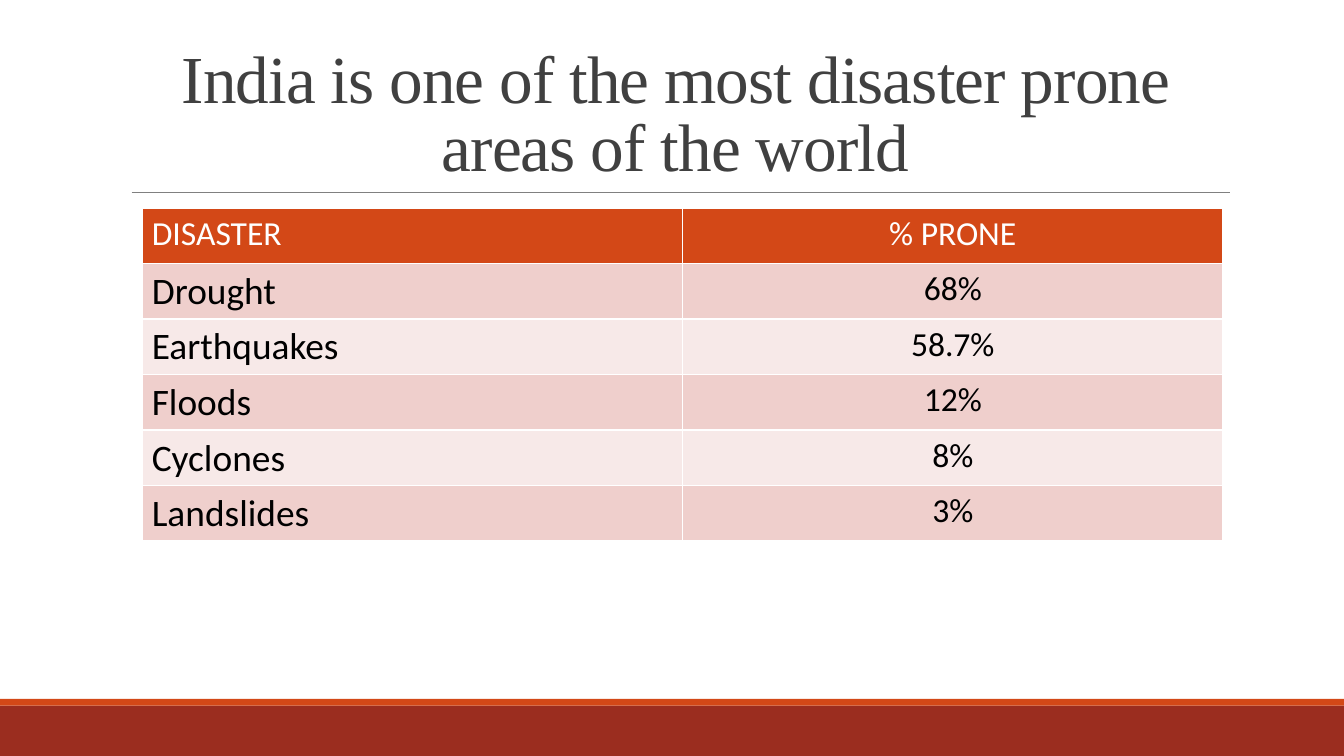
from lxml.etree import SubElement
from pptx import Presentation
from pptx.dml.color import RGBColor
from pptx.enum.shapes import MSO_CONNECTOR, MSO_SHAPE
from pptx.enum.text import MSO_ANCHOR, PP_ALIGN
from pptx.oxml.ns import qn
from pptx.util import Inches, Pt

TITLE = "India is one of the most disaster prone areas of the world"
ROWS = [
    ("DISASTER", "% PRONE"),
    ("Drought", "68%"),
    ("Earthquakes", "58.7%"),
    ("Floods", "12%"),
    ("Cyclones", "8%"),
    ("Landslides", "3%"),
]
THEME = {
    "title_font": "Times New Roman", "body_font": "Calibri",
    "title_size": 36, "name_size": 20, "value_size": 18,
    "title": "404040", "rule": "808080", "text": "000000", "white": "FFFFFF",
    "accent": "D34817", "footer": "9B2D1F", "bands": ("EFCFCC", "F7E9E8"),
}
FOOTER_BARS = [(5.25, 0.38, "footer"), (5.2, 0.05, "accent")]
COLUMN_WIDTH, ROW_HEIGHT = 4.02, 0.41


def style_text(para, font, size, color, align):
    para.alignment = align
    for span in para.runs:
        span.font.name = font
        span.font.size = Pt(size)
        span.font.color.rgb = RGBColor.from_string(color)


def set_margins(target):
    target.margin_left = target.margin_right = Inches(0.07)
    target.margin_top = target.margin_bottom = Inches(0.04)


def add_borders(cell):
    properties = cell._tc.get_or_add_tcPr()
    for position, side in enumerate("LRTB"):
        line = SubElement(properties, qn(f"a:ln{side}"), w=str(Pt(1)))
        fill = SubElement(line, qn("a:solidFill"))
        SubElement(fill, qn("a:srgbClr"), val=THEME["white"])
        properties.insert(position, line)


def add_footer(page, width):
    for top, height, color in FOOTER_BARS:
        bar = page.shapes.add_shape(
            MSO_SHAPE.RECTANGLE, 0, Inches(top), width, Inches(height))
        bar.shadow.inherit = False
        bar.fill.solid()
        bar.fill.fore_color.rgb = RGBColor.from_string(THEME[color])
        bar.line.fill.background()


def add_title(page):
    rule = page.shapes.add_connector(
        MSO_CONNECTOR.STRAIGHT, Inches(0.98), Inches(1.43), Inches(9.15), Inches(1.43))
    rule.line.color.rgb = RGBColor.from_string(THEME["rule"])
    rule.line.width = Pt(0.5)
    SubElement(rule._element.spPr, qn("a:effectLst"))

    box = page.shapes.add_textbox(Inches(0.9), Inches(0.24), Inches(8.25), Inches(1.19))
    frame = box.text_frame
    frame.word_wrap = True
    frame.vertical_anchor = MSO_ANCHOR.BOTTOM
    set_margins(frame)
    frame.margin_bottom = Inches(0.05)
    frame.text = TITLE
    para = frame.paragraphs[0]
    para.line_spacing = 0.85
    style_text(para, THEME["title_font"], THEME["title_size"], THEME["title"], PP_ALIGN.CENTER)
    para.runs[0].font._element.set("spc", "-50")


def add_disaster_table(page):
    columns = len(ROWS[0])
    table = page.shapes.add_table(
        len(ROWS), columns, Inches(1.06), Inches(1.55),
        Inches(COLUMN_WIDTH * columns), Inches(ROW_HEIGHT * len(ROWS))).table
    for column in table.columns:
        column.width = Inches(COLUMN_WIDTH)
    for row_index, values in enumerate(ROWS):
        table.rows[row_index].height = Inches(ROW_HEIGHT)
        header = row_index == 0
        fill = THEME["accent"] if header else THEME["bands"][(row_index - 1) % 2]
        for column_index, value in enumerate(values):
            cell = table.cell(row_index, column_index)
            cell.text = value
            set_margins(cell)
            cell.fill.solid()
            cell.fill.fore_color.rgb = RGBColor.from_string(fill)
            add_borders(cell)
            is_name = column_index == 0
            style_text(
                cell.text_frame.paragraphs[0], THEME["body_font"],
                THEME["name_size"] if is_name and not header else THEME["value_size"],
                THEME["white"] if header else THEME["text"],
                PP_ALIGN.LEFT if is_name else PP_ALIGN.CENTER)


def main():
    deck = Presentation()
    deck.slide_width = Inches(10)
    deck.slide_height = deck.slide_width * 9 // 16
    page = deck.slides.add_slide(deck.slide_layouts[6])
    add_footer(page, deck.slide_width)
    add_title(page)
    add_disaster_table(page)
    deck.save("out.pptx")


if __name__ == "__main__":
    main()
